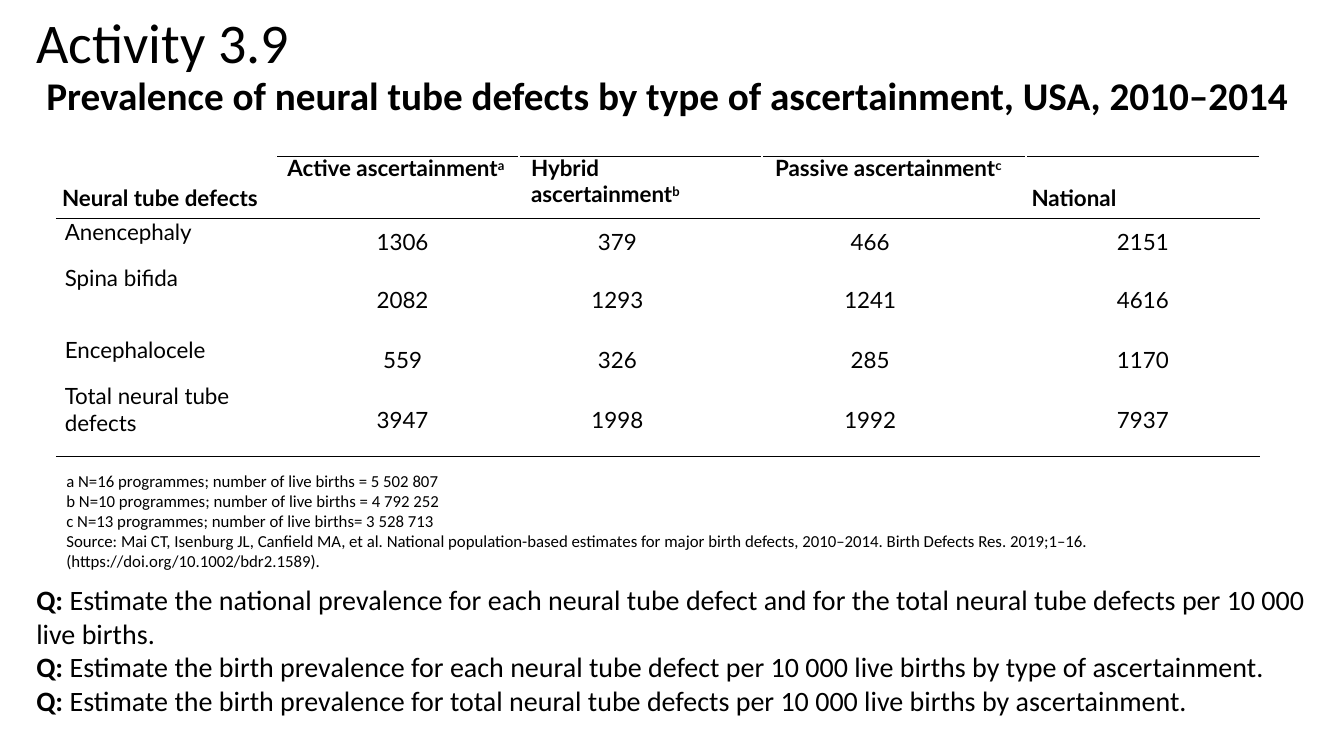
import pptx
import pptx.util
import pptx.dml.color
import pptx.enum.text
import pptx.oxml
from pptx.oxml.ns import nsdecls

Pt = pptx.util.Pt
Align = pptx.enum.text.PP_ALIGN
Anchor = pptx.enum.text.MSO_ANCHOR
Fit = pptx.enum.text.MSO_AUTO_SIZE
BLACK = pptx.dml.color.RGBColor(0, 0, 0)

HEADS = [("Neural tube defects", ""), ("Active ascertainment", "a"),
         ("Hybrid ascertainment", "b"), ("Passive ascertainment", "c"),
         ("National", "")]
ROWS = [("Anencephaly", 1306, 379, 466, 2151),
        ("Spina bifida", 2082, 1293, 1241, 4616),
        ("Encephalocele", 559, 326, 285, 1170),
        ("Total neural tube defects", 3947, 1998, 1992, 7937)]
WIDTHS = [157, 173.5, 173.5, 188.6, 167]
HEIGHTS = [44.6, 32.4, 51.8, 33.1, 52.6]
# left and right insets of each column
HEAD_PADS = [(4, 0), (8, 0), (8.6, 12), (9.4, 0), (4, 0)]
BODY_PADS = [(6, 0), (33, 26), (0, 33), (0, 34), (20, 20)]

NOTES = [
    "a N=16 programmes; number of live births = 5 502 807",
    "b N=10 programmes; number of live births = 4 792 252",
    "c N=13 programmes; number of live births= 3 528 713",
    "Source: Mai CT, Isenburg JL, Canfield MA, et al. National population-based "
    "estimates for major birth defects, 2010–2014. Birth Defects Res. 2019;1–16. "
    "(https://doi.org/10.1002/bdr2.1589).",
]
TASKS = [
    "Estimate the national prevalence for each neural tube defect and for the "
    "total neural tube defects per 10 000 live births.",
    "Estimate the birth prevalence for each neural tube defect per 10 000 live "
    "births by type of ascertainment.",
    "Estimate the birth prevalence for total neural tube defects per 10 000 live "
    "births by ascertainment.",
]


def apply(item, values):
    for name, value in values.items():
        setattr(item, name, value)


class Page:
    def __init__(self, slide, face="Calibri", grid_face="Lato"):
        self.slide, self.face, self.grid_face = slide, face, grid_face

    def put(self, para, runs, size, face=None, **style):
        """Fill a paragraph with (text, bold, raised) runs."""
        apply(para, style)
        for text, bold, raised in runs:
            run = para.add_run()
            run.text = text
            apply(run.font, {"name": face or self.face, "size": Pt(size), "bold": bold})
            run.font.color.rgb = BLACK
            if raised:
                run.font._element.set("baseline", "30000")

    def fill(self, shape, box, lines, size, anchor=Anchor.TOP, **style):
        """Place a text shape and add one paragraph per list of runs."""
        apply(shape, dict(zip(("left", "top", "width", "height"), map(Pt, box))))
        frame = shape.text_frame
        apply(frame, {"word_wrap": True, "auto_size": Fit.NONE,
                      "vertical_anchor": anchor})
        for i, runs in enumerate(lines):
            para = frame.add_paragraph() if i else frame.paragraphs[0]
            props = para._p.get_or_add_pPr()
            props.set("marL", "0")
            props.set("indent", "0")
            props.append(pptx.oxml.parse_xml(f"<a:buNone {nsdecls('a')}/>"))
            self.put(para, runs, size, alignment=Align.LEFT,
                     space_before=Pt(0), **style)

    def title(self, box, text):
        self.fill(self.slide.shapes.title, box, [[(text, False, False)]], 40,
                  Anchor.MIDDLE, line_spacing=0.9)

    def body(self, box, lines, size):
        self.fill(self.slide.placeholders[1], box, lines, size)

    def text(self, box, lines, size, anchor=Anchor.TOP):
        self.fill(self.slide.shapes.add_textbox(0, 0, 0, 0), box, lines, size, anchor)

    def rule(self, cell, sides):
        for side in sides:
            cell._tc.get_or_add_tcPr().append(pptx.oxml.parse_xml(
                f'<a:ln{side} {nsdecls("a")} w="12700"><a:solidFill>'
                f'<a:srgbClr val="{BLACK}"/></a:solidFill></a:ln{side}>'))

    def cell(self, cell, runs, pads, sides, anchor, foot=0, **style):
        apply(cell, {"margin_left": Pt(pads[0]), "margin_right": Pt(pads[1]),
                     "margin_top": 0, "margin_bottom": Pt(foot),
                     "vertical_anchor": anchor})
        self.rule(cell, sides)
        cell.fill.background()
        self.put(cell.text_frame.paragraphs[0], runs, 16, self.grid_face, **style)

    def table(self, left, top):
        grid = self.slide.shapes.add_table(
            len(HEIGHTS), len(WIDTHS), Pt(left), Pt(top),
            Pt(sum(WIDTHS)), Pt(sum(HEIGHTS))).table
        apply(grid, {"first_row": False, "horz_banding": False})
        for col, width in zip(grid.columns, WIDTHS):
            col.width = Pt(width)
        for row, height in zip(grid.rows, HEIGHTS):
            row.height = Pt(height)
        for c, (head, mark) in enumerate(HEADS):
            runs = [(head, True, False)] + ([(mark, True, True)] if mark else [])
            self.cell(grid.cell(0, c), runs, HEAD_PADS[c], "TB" if c else "B",
                      Anchor.TOP if mark else Anchor.BOTTOM, 0 if mark else 5,
                      line_spacing=0.97 if mark else 1.0)
        for r, values in enumerate(ROWS, 1):
            sides = "T" if r == 1 else "B" if r == len(ROWS) else ""
            for c, value in enumerate(values):
                self.cell(grid.cell(r, c), [(str(value), False, False)],
                          BODY_PADS[c], sides, Anchor.MIDDLE if c else Anchor.TOP,
                          alignment=Align.CENTER if c else Align.LEFT)


def main():
    deck = pptx.Presentation()
    apply(deck, {"slide_width": Pt(960), "slide_height": Pt(540)})
    page = Page(deck.slides.add_slide(deck.slide_layouts[1]))
    page.title((18.7, -4.3, 828, 73.4), "Activity 3.9")
    page.text((26, 47.5, 929, 41), [[(
        "Prevalence of neural tube defects by type of ascertainment, USA, 2010–2014",
        True, False)]], 28, Anchor.MIDDLE)
    page.body((18.7, 412.6, 937, 104.4),
              [[("Q: ", True, False), (task, False, False)] for task in TASKS], 20)
    page.table(40.3, 111.6)
    page.text((40.3, 332.6, 896, 80), [[(note, False, False)] for note in NOTES], 12)
    deck.save("out.pptx")


if __name__ == "__main__":
    main()
